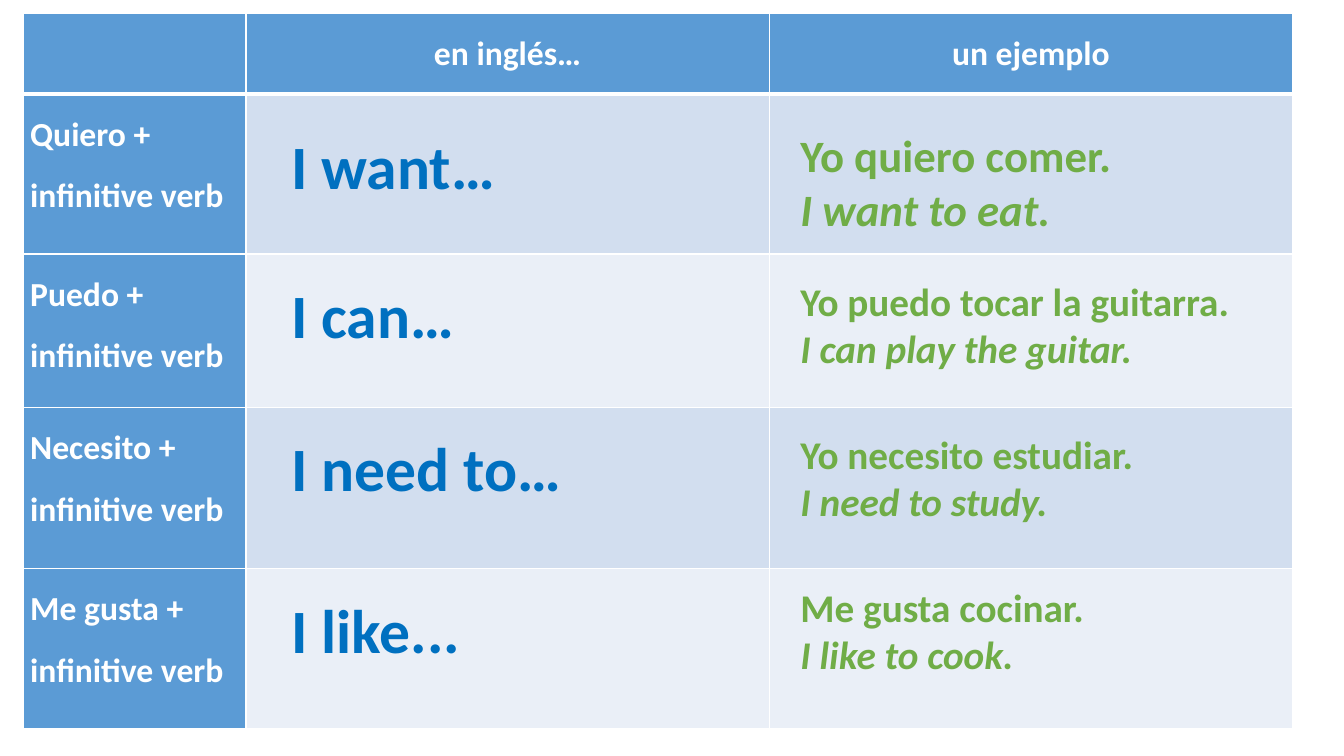
from lxml import etree
from pptx import Presentation
from pptx.dml.color import RGBColor
from pptx.enum.text import MSO_AUTO_SIZE, PP_ALIGN
from pptx.oxml.ns import qn
from pptx.util import Pt

PX = 9144
GROW = MSO_AUTO_SIZE.SHAPE_TO_FIT_TEXT
CENTER, LEFT = PP_ALIGN.CENTER, PP_ALIGN.LEFT
WHITE = RGBColor(0xFF, 0xFF, 0xFF)
HEADER_BLUE = RGBColor(0x5B, 0x9B, 0xD5)
BANDS = (RGBColor(0xD2, 0xDE, 0xEF), RGBColor(0xEA, 0xEF, 0xF7))
BLUE = RGBColor(0x00, 0x70, 0xC0)
GREEN = RGBColor(0x70, 0xAD, 0x47)

COLS = (221, 519, 519)
ROWS = (80, 159, 152, 160, 159)
HEADINGS = ("", "en inglés…", "un ejemplo")
ENGLISH_X, EXAMPLE_X, TEXT_W = 279, 784, 460
PHRASES = (
    ("Quiero +", "I want…", 122, "Yo quiero comer.", "I want to eat.", 122, 32),
    ("Puedo +", "I can…", 270, "Yo puedo tocar la guitarra.", "I can play the guitar.", 270, 28),
    ("Necesito +", "I need to…", 422, "Yo necesito estudiar.", "I need to study.", 422, 28),
    ("Me gusta +", "I like...", 582, "Me gusta cocinar.", "I like to cook.", 574, 28),
)


def add_run(p, text, **fmt):
    """Add a bold Calibri run with the given size, colour and style."""
    r = p.add_run()
    r.text = text
    r.font.color.rgb = fmt.pop("color")
    for name, value in {"name": "Calibri", "bold": True, **fmt}.items():
        setattr(r.font, name, value)


def set_borders(cell, top, bottom):
    """Give a cell white borders, 1 pt at the sides."""
    tc_pr = cell._tc.get_or_add_tcPr()
    widths = {"lnL": 1, "lnR": 1, "lnT": top, "lnB": bottom}
    for i, (tag, width) in enumerate(widths.items()):
        ln = etree.Element(qn(f"a:{tag}"), w=str(Pt(width)))
        fill = etree.SubElement(ln, qn("a:solidFill"))
        etree.SubElement(fill, qn("a:srgbClr"), val=str(WHITE))
        tc_pr.insert(i, ln)


def fill_cell(cell, text, color, align):
    """Fill a cell and write its white label, if it has one."""
    cell.fill.solid()
    cell.fill.fore_color.rgb = color
    margins = {"margin_left": 7, "margin_right": 7, "margin_top": 0, "margin_bottom": 0}
    for name, value in margins.items():
        setattr(cell, name, value * PX)
    if text:
        p = cell.text_frame.paragraphs[0]
        p.alignment, p.line_spacing = align, 1.5
        add_run(p, text, size=Pt(24), color=WHITE)


def add_verb_table(slide):
    """Add the grid with its headings and verb labels."""
    frame = slide.shapes.add_table(len(ROWS), len(COLS), 23 * PX, 13 * PX,
                                   sum(COLS) * PX, sum(ROWS) * PX)
    table = frame.table
    for col, width in zip(table.columns, COLS):
        col.width = width * PX
    for row, height in zip(table.rows, ROWS):
        row.height = height * PX
    labels = [HEADINGS] + [(f"{phrase[0]} infinitive verb", "", "") for phrase in PHRASES]
    for i, row_labels in enumerate(labels):
        for j, text in enumerate(row_labels):
            cell = table.cell(i, j)
            color = HEADER_BLUE if i == 0 or j == 0 else BANDS[(i - 1) % 2]
            fill_cell(cell, text, color, CENTER if i == 0 else LEFT)
            set_borders(cell, 3 if i == 1 else 1, 3 if i == 0 else 1)


def add_text(slide, x, y, h, lines, size, color):
    """Add a text box whose second line, if any, is italic."""
    sp = slide.shapes.add_textbox(x * PX, y * PX, TEXT_W * PX, h * PX)
    tf = sp.text_frame
    tf.word_wrap, tf.auto_size = True, GROW
    for i, line in enumerate(lines):
        p = tf.add_paragraph() if i else tf.paragraphs[0]
        add_run(p, line, size=Pt(size), color=color, italic=i > 0)


def main():
    """Build the verb slide and save it."""
    prs = Presentation()
    prs.slide_width, prs.slide_height = 1333 * PX, 750 * PX
    slide = prs.slides.add_slide(prs.slide_layouts[6])
    add_verb_table(slide)
    for _, english, english_y, example, meaning, example_y, size in PHRASES:
        add_text(slide, ENGLISH_X, english_y, 84, [english], 44, BLUE)
        add_text(slide, EXAMPLE_X, example_y, 118 if size == 32 else 104,
                 [example, meaning], size, GREEN)
    prs.save("out.pptx")


if __name__ == "__main__":
    main()
